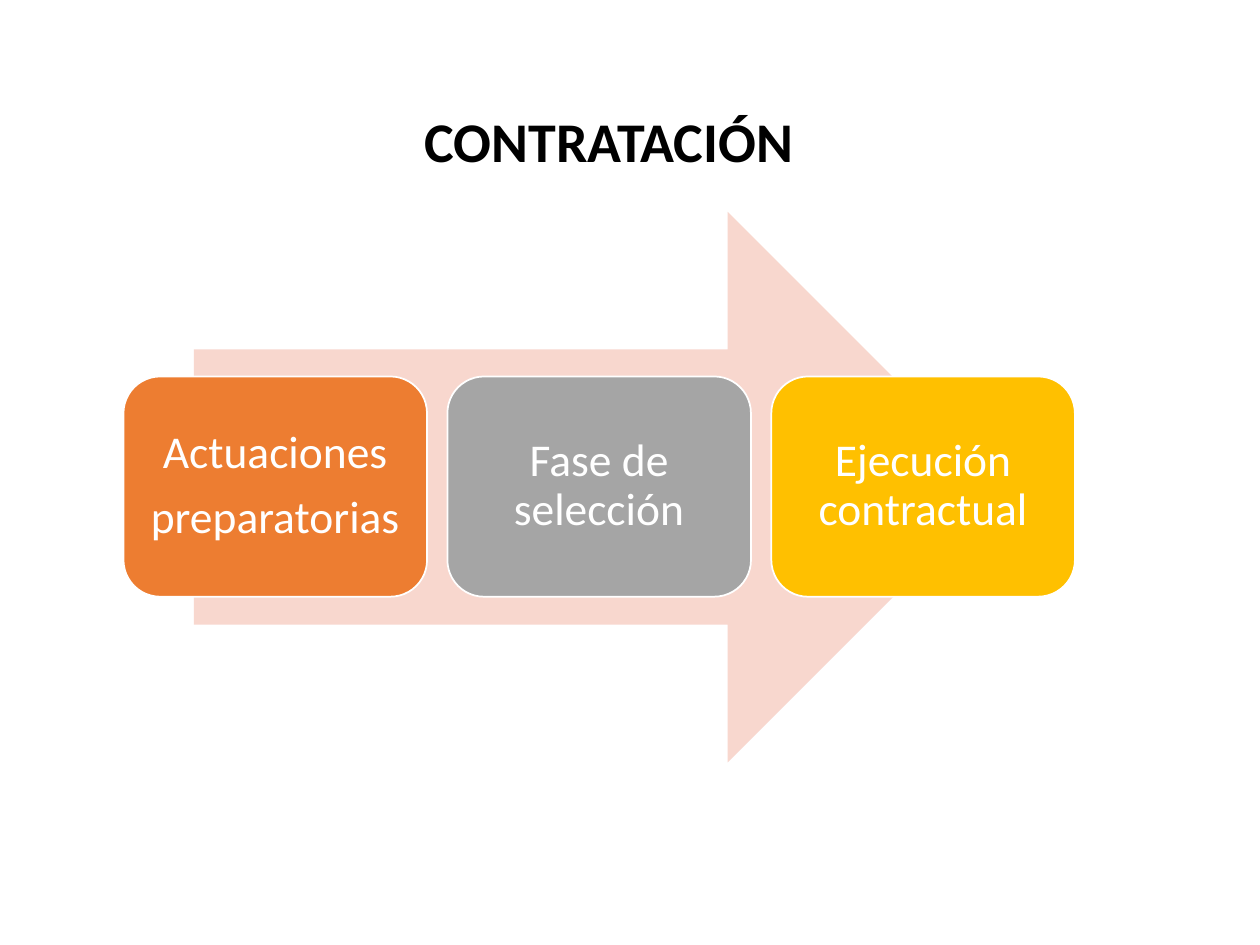
from pptx import Presentation
from pptx.dml.color import RGBColor
from pptx.enum import shapes, text
from pptx.util import Cm, Pt

COLORS = {
    "title": "000000",
    "arrow": "F8D7CE",
    "preparation": "ED7D31",
    "selection": "A5A5A5",
    "execution": "FFC000",
    "white": "FFFFFF",
}
FONT = "Calibri"

# Phases of the contract, in order: fill and paragraphs
PHASES = [
    ("preparation", ["Actuaciones", "preparatorias"]),
    ("selection", ["Fase de selección"]),
    ("execution", ["Ejecución contractual"]),
]
PHASE_LEFT, PHASE_TOP = 2.49, 7.59
PHASE_WIDTH, PHASE_HEIGHT = 6.12, 4.44
PHASE_PITCH = 6.53


def color(name):
    return RGBColor.from_string(COLORS[name])


def add_line(paragraph, words, size, ink, bold=False):
    paragraph.alignment = text.PP_ALIGN.CENTER
    paragraph.line_spacing = 0.9
    run = paragraph.add_run()
    run.text = words
    run.font.name = FONT
    run.font.size = Pt(size)
    run.font.bold = bold
    run.font.color.rgb = color(ink)


def add_filled(slide, kind, left, top, width, height, fill):
    figure = slide.shapes.add_shape(kind, Cm(left), Cm(top), Cm(width), Cm(height))
    figure.shadow.inherit = False
    figure.fill.solid()
    figure.fill.fore_color.rgb = color(fill)
    figure.line.fill.background()
    return figure


def add_title(slide, words):
    title = slide.shapes.add_textbox(Cm(0.86), Cm(2.34), Cm(22.83), Cm(1.3))
    frame = title.text_frame
    frame.word_wrap = True
    frame.vertical_anchor = text.MSO_ANCHOR.BOTTOM
    add_line(frame.paragraphs[0], words, 32, "title", bold=True)


def add_phase(slide, left, fill, lines):
    phase = add_filled(slide, shapes.MSO_SHAPE.ROUNDED_RECTANGLE,
                       left, PHASE_TOP, PHASE_WIDTH, PHASE_HEIGHT, fill)
    phase.line.color.rgb = color("white")
    phase.line.width = Pt(1)
    frame = phase.text_frame
    frame.word_wrap = True
    frame.vertical_anchor = text.MSO_ANCHOR.MIDDLE
    frame.margin_left = frame.margin_right = Cm(0.28)
    frame.margin_top = frame.margin_bottom = Cm(0.28)
    for i, words in enumerate(lines):
        paragraph = frame.add_paragraph() if i else frame.paragraphs[0]
        paragraph.space_after = Pt(9)
        add_line(paragraph, words, 26, "white")


def main():
    deck = Presentation()
    deck.slide_width, deck.slide_height = Cm(25.4), Cm(19.05)
    slide = deck.slides.add_slide(deck.slide_layouts[6])

    # Heading
    add_title(slide, "CONTRATACIÓN")

    # Arrow behind the phases
    add_filled(slide, shapes.MSO_SHAPE.RIGHT_ARROW, 3.91, 4.27, 16.31, 11.1, "arrow")

    # Phases at an equal pitch
    for i, (fill, lines) in enumerate(PHASES):
        add_phase(slide, PHASE_LEFT + i * PHASE_PITCH, fill, lines)

    deck.save("out.pptx")


if __name__ == "__main__":
    main()
